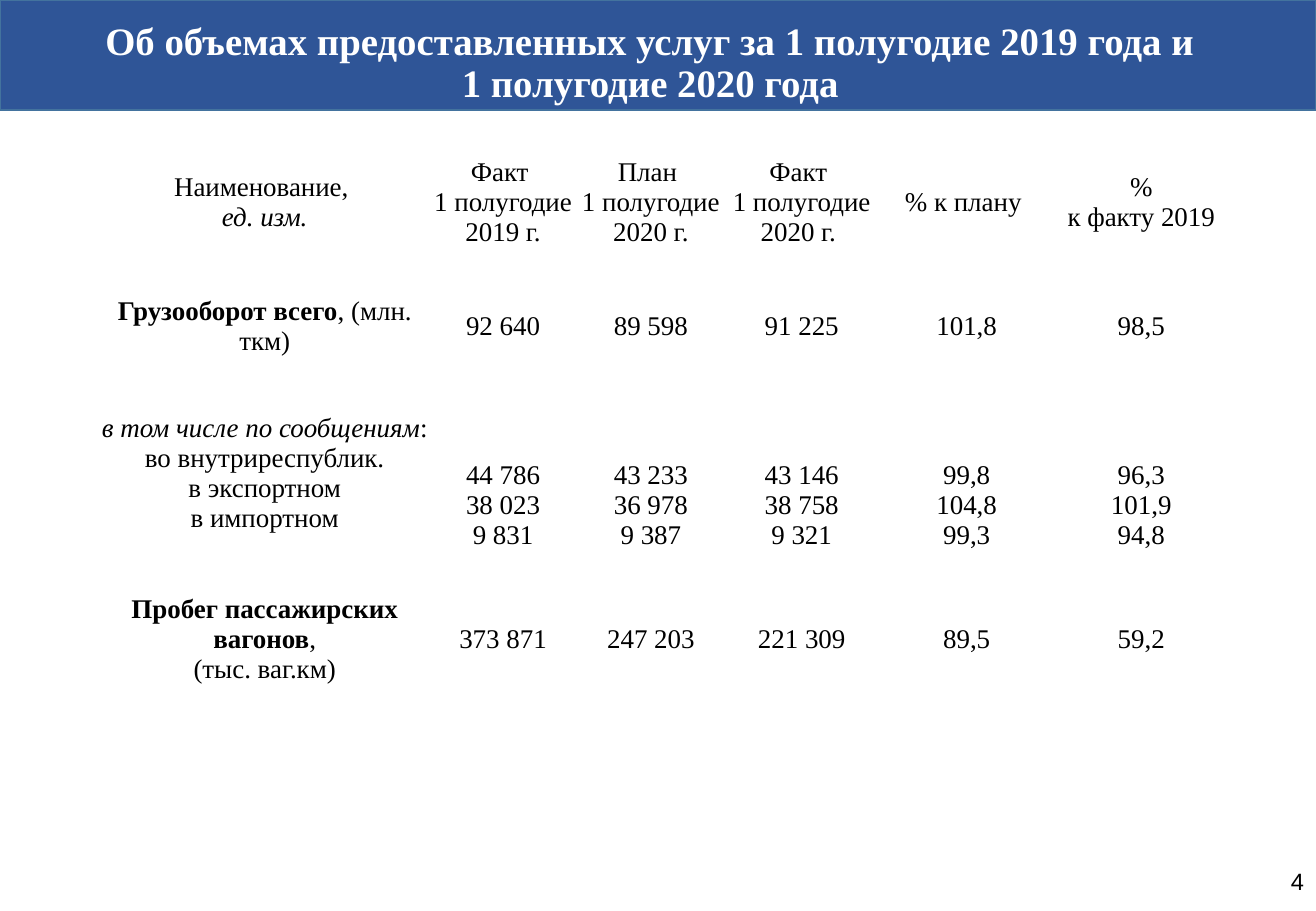
from pptx import Presentation
from pptx.dml.color import RGBColor
from pptx.enum.shapes import MSO_SHAPE
from pptx.enum.text import MSO_ANCHOR, PP_ALIGN
from pptx.util import Emu, Pt

PX = 7620  # 120 px to the inch
BLUE = RGBColor(0x2F, 0x55, 0x97)
EDGE = RGBColor(0x43, 0x73, 0x9E)
WHITE = RGBColor(0xFF, 0xFF, 0xFF)
BLACK = RGBColor(0, 0, 0)
SERIF = "Times New Roman"

COLUMN_WIDTHS = [323, 148, 144, 154, 172, 173]
ROW_HEIGHTS = [113, 133, 158, 169]
BREAKDOWN_ROW = 2
BREAKDOWN_DROP = 62  # brings the figures level with their labels
ITALIC = {"italic": True}
BOLD = {"bold": True}

# A cell is a list of lines; a line is a string or a list of (text, format) spans.
ROWS = [
    [
        ["Наименование, ", [("ед. изм.", ITALIC)]],
        ["Факт ", "1 полугодие", "2019 г."],
        ["План ", "1 полугодие", "2020 г."],
        ["Факт ", "1 полугодие", "2020 г. "],
        ["% к плану "],
        ["%", "к факту 2019"],
    ],
    [
        [[("Грузооборот всего", BOLD), (", (млн. ткм)", {})]],
        ["92 640"], ["89 598"], ["91 225"], ["101,8"], ["98,5"],
    ],
    [
        [
            [("в том числе по сообщениям", ITALIC), (":", {})],
            "во внутриреспублик.", "в экспортном", "в импортном",
        ],
        ["44 786", "38 023", "9 831"],
        ["43 233", "36 978", "9 387"],
        ["43 146", "38 758", "9 321"],
        ["99,8", "104,8", "99,3"],
        ["96,3", "101,9", "94,8"],
    ],
    [
        [[("Пробег пассажирских вагонов", BOLD), (",", {})], "(тыс. ваг.км)"],
        ["373 871"], ["247 203"], ["221 309"], ["89,5"], ["59,2"],
    ],
]


def px(*lengths):
    return [Emu(length * PX) for length in lengths]


def set_margins(holder, left, top, right, bottom):
    (holder.margin_left, holder.margin_top,
     holder.margin_right, holder.margin_bottom) = px(left, top, right, bottom)


def write_text(frame, lines, size=16, font=SERIF, color=BLACK, bold=False,
               align=PP_ALIGN.CENTER, line_spacing=None):
    for index, line in enumerate(lines):
        para = frame.add_paragraph() if index else frame.paragraphs[0]
        para.alignment = align
        para.line_spacing = line_spacing
        for text, style in [(line, {})] if isinstance(line, str) else line:
            span = para.add_run()
            span.text = text
            span.font.name = font
            span.font.size = Pt(size)
            span.font.color.rgb = color
            span.font.bold = style.get("bold", bold)
            span.font.italic = style.get("italic", False)


def add_band(page):
    band = page.shapes.add_shape(MSO_SHAPE.RECTANGLE, *px(0, 0, 1300, 109))
    band.shadow.inherit = False
    band.fill.solid()
    band.fill.fore_color.rgb = BLUE
    band.line.color.rgb = EDGE
    band.line.width = Pt(1)


def add_text_box(page, area, lines, margins, anchor=MSO_ANCHOR.TOP, **text_format):
    frame = page.shapes.add_textbox(*px(*area)).text_frame
    frame.word_wrap = True
    frame.vertical_anchor = anchor
    set_margins(frame, *margins)
    write_text(frame, lines, **text_format)


def add_volume_table(page):
    area = px(100, 143, sum(COLUMN_WIDTHS), sum(ROW_HEIGHTS))
    table = page.shapes.add_table(len(ROWS), len(COLUMN_WIDTHS), *area).table
    table.first_row = False
    table.horz_banding = False
    for column, width in zip(table.columns, px(*COLUMN_WIDTHS)):
        column.width = width
    for row, height in zip(table.rows, px(*ROW_HEIGHTS)):
        row.height = height
    for row_index, row in enumerate(ROWS):
        for column_index, lines in enumerate(row):
            cell = table.cell(row_index, column_index)
            cell.fill.background()
            cell.vertical_anchor = MSO_ANCHOR.MIDDLE
            dropped = row_index == BREAKDOWN_ROW and column_index > 0
            set_margins(cell, 0, BREAKDOWN_DROP if dropped else 0, 0, 0)
            write_text(cell.text_frame, lines)


def main():
    deck = Presentation()
    deck.slide_width, deck.slide_height = px(1300, 900)
    page = deck.slides.add_slide(deck.slide_layouts[6])
    add_band(page)
    add_text_box(
        page, (54, 18, 1177, 76),
        ["Об объемах предоставленных услуг за 1 полугодие 2019 года и",
         "1 полугодие 2020 года"],
        margins=(0, 14, 0, 0), anchor=MSO_ANCHOR.MIDDLE,
        size=23, color=WHITE, bold=True, line_spacing=0.9)
    add_volume_table(page)
    add_text_box(page, (1217, 851, 83, 48), ["4"], margins=(12, 6, 12, 6),
                 size=14, font="Arial", align=PP_ALIGN.RIGHT)
    deck.save("out.pptx")


if __name__ == "__main__":
    main()
